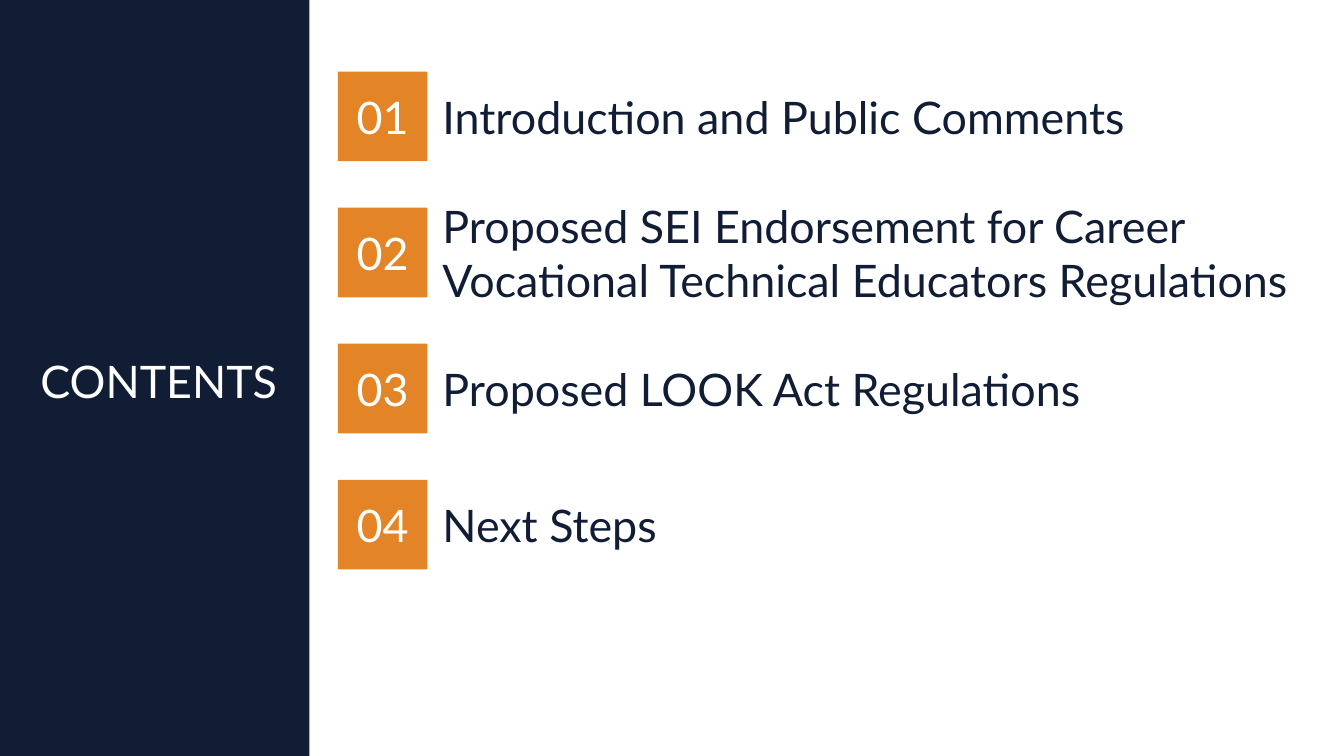
import pptx
import pptx.dml.color
import pptx.enum.shapes
import pptx.enum.text
import pptx.util

Inches = pptx.util.Inches
ALIGN = pptx.enum.text.PP_ALIGN
NAVY = "101D35"
ORANGE = "E38526"
WHITE = "FFFFFF"
TOPICS = [
    "Introduction and Public Comments",
    "Proposed SEI Endorsement for Career Vocational Technical Educators Regulations",
    "Proposed LOOK Act Regulations",
    "Next Steps",
]
TOP, PITCH, SIDE = 0.71, 1.35, 0.89


def paint(target, color):
    target.rgb = pptx.dml.color.RGBColor.from_string(color)


def write(shape, text, color=NAVY, size=32, align=ALIGN.LEFT, spacing=1.0):
    frame = shape.text_frame
    frame.word_wrap = True
    frame.auto_size = pptx.enum.text.MSO_AUTO_SIZE.NONE
    frame.vertical_anchor = pptx.enum.text.MSO_ANCHOR.MIDDLE
    para = frame.paragraphs[0]
    para.alignment = align
    para.line_spacing = spacing
    run = para.add_run()
    run.text = text
    run.font.name = "Lato"
    run.font.size = pptx.util.Pt(size)
    run.font.bold = False
    paint(run.font.color, color)


def block(slide, left, top, width, height, color):
    shape = slide.shapes.add_shape(
        pptx.enum.shapes.MSO_SHAPE.RECTANGLE,
        Inches(left), Inches(top), Inches(width), Inches(height))
    shape.shadow.inherit = False
    shape.fill.solid()
    paint(shape.fill.fore_color, color)
    shape.line.fill.background()
    return shape


def heading(slide, text):
    title = slide.shapes.title
    title.left, title.top = Inches(0.3), Inches(3.08)
    title.width, title.height = Inches(2.73), Inches(1.45)
    write(title, text, color=WHITE, spacing=0.9)
    panel = block(slide, 0, 0, 3.07, 7.5, NAVY)
    title.element.addprevious(panel.element)


def topic(slide, index, text):
    top = TOP + index * PITCH
    badge = block(slide, 3.35, top, SIDE, SIDE, ORANGE)
    write(badge, f"{index + 1:02}", color=WHITE, align=ALIGN.CENTER)
    label = slide.shapes.add_textbox(
        Inches(4.29), Inches(top), Inches(8.73), Inches(SIDE))
    write(label, text)


def main():
    deck = pptx.Presentation()
    deck.slide_width = Inches(13.33)
    deck.slide_height = Inches(7.5)
    slide = deck.slides.add_slide(deck.slide_layouts[5])
    heading(slide, "CONTENTS")
    for index, text in enumerate(TOPICS):
        topic(slide, index, text)
    deck.save("out.pptx")


if __name__ == "__main__":
    main()
